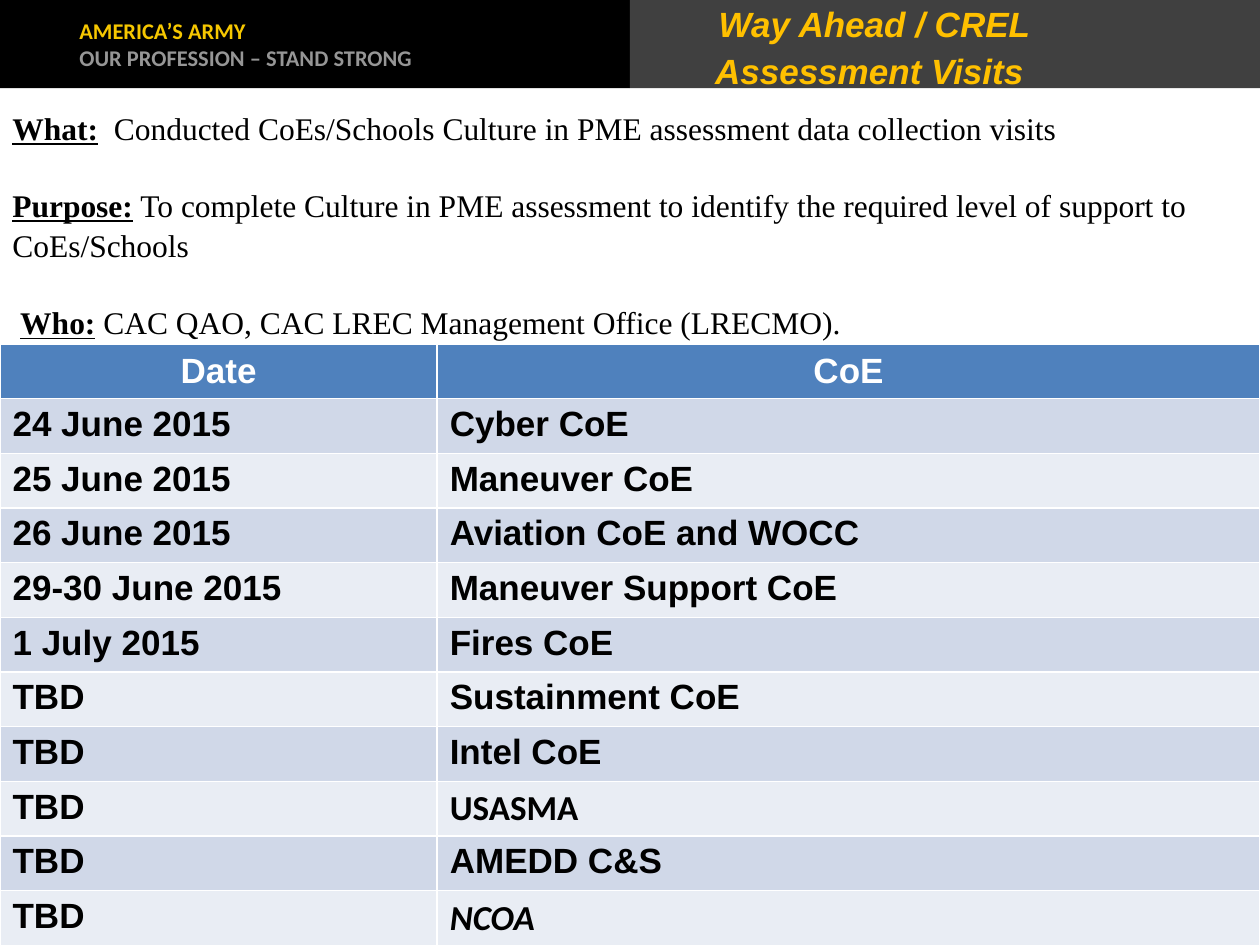
from pptx import Presentation, util as u
from pptx.dml.color import RGBColor
from pptx.enum import shapes, text

BLACK = RGBColor(0x00, 0x00, 0x00)
WHITE = RGBColor(0xFF, 0xFF, 0xFF)
CHARCOAL = RGBColor(0x40, 0x40, 0x40)
GRAY = RGBColor(0x96, 0x96, 0x96)
GOLD = RGBColor(0xF6, 0xC7, 0x00)
AMBER = RGBColor(0xFF, 0xC0, 0x00)
BLUE = RGBColor(0x4F, 0x81, 0xBD)
BANDS = [RGBColor(0xE9, 0xED, 0xF4), RGBColor(0xD0, 0xD8, 0xE8)]

deck = Presentation()
deck.slide_width, deck.slide_height = u.Inches(10), u.Inches(7.5)
W, H = deck.slide_width, deck.slide_height
slide = deck.slides.add_slide(deck.slide_layouts[6])
BANNER_H = u.Inches(0.7)
TABLE_TOP = u.Inches(2.73)


def set_font(paragraph, name, size, color, bold=True, italic=None):
    font = paragraph.font
    font.name, font.size, font.bold, font.italic = name, u.Pt(size), bold, italic
    font.color.rgb = color


# Banner: two halves of the slide's width
halves = []
for column, color in enumerate([BLACK, CHARCOAL]):
    half = slide.shapes.add_shape(
        shapes.MSO_SHAPE.RECTANGLE, column * W // 2, 0, W // 2, BANNER_H)
    half.shadow.inherit = False
    half.fill.solid()
    half.fill.fore_color.rgb = color
    half.line.fill.background()
    halves.append(half)

motto = halves[0].text_frame
motto.margin_left = u.Inches(0.63)
motto.vertical_anchor = text.MSO_ANCHOR.MIDDLE
motto.text = "AMERICA’S ARMY\nOUR PROFESSION – STAND STRONG"
for line, color in zip(motto.paragraphs, [GOLD, GRAY]):
    line.alignment = text.PP_ALIGN.LEFT
    set_font(line, "Calibri", 12.8, color)

title = slide.shapes.add_textbox(u.Inches(4.9), 0, u.Inches(4), BANNER_H).text_frame
title.word_wrap = True
title.vertical_anchor = text.MSO_ANCHOR.MIDDLE
title.margin_top = title.margin_bottom = 0
heading = title.paragraphs[0]
heading.text = " Way Ahead / CREL Assessment Visits"
heading.alignment = text.PP_ALIGN.CENTER
heading.line_spacing = 1.12
set_font(heading, "Arial", 20, AMBER, italic=True)

# Summary: underlined label, then its statement
summary = [
    ("", "What:", "  Conducted CoEs/Schools Culture in PME assessment data collection visits"),
    ("", "Purpose:", " To complete Culture in PME assessment to identify the required "
     "level of support to CoEs/Schools"),
    (" ", "Who:", " CAC QAO, CAC LREC Management Office (LRECMO)."),
]
summary_top = u.Inches(0.8)
notes = slide.shapes.add_textbox(0, summary_top, W, TABLE_TOP - summary_top).text_frame
notes.word_wrap = True
for i, (lead, label, statement) in enumerate(summary):
    point = notes.paragraphs[0] if i == 0 else notes.add_paragraph()
    point.line_spacing = 1.05
    if i:
        point.space_before = u.Pt(21.6)
    set_font(point, "Times New Roman", 18, BLACK, bold=False)
    for part in filter(None, (lead, label, statement)):
        run = point.add_run()
        run.text = part
        if part == label:
            run.font.bold = run.font.underline = True

# Visit schedule fills the rest of the slide
visits = [
    ("Date", "CoE"),
    ("24 June 2015", "Cyber CoE"),
    ("25 June 2015", "Maneuver CoE"),
    ("26 June 2015", "Aviation CoE and WOCC"),
    ("29-30 June 2015", "Maneuver Support CoE"),
    ("1 July 2015", "Fires CoE"),
    ("TBD", "Sustainment CoE"),
    ("TBD", "Intel CoE"),
    ("TBD", "USASMA"),
    ("TBD", "AMEDD C&S"),
    ("TBD", "NCOA"),
]
schedule = slide.shapes.add_table(
    len(visits), 2, 0, TABLE_TOP, W, H - TABLE_TOP).table
schedule.columns[0].width = u.Inches(3.47)
schedule.columns[1].width = W - u.Inches(3.47)
for r, visit in enumerate(visits):
    for c, entry in enumerate(visit):
        cell = schedule.cell(r, c)
        cell.text = entry
        cell.fill.solid()
        cell.fill.fore_color.rgb = BANDS[r % 2] if r else BLUE
        line = cell.text_frame.paragraphs[0]
        face = "Calibri" if entry in ("USASMA", "NCOA") else "Arial"
        set_font(line, face, 20, BLACK if r else WHITE, italic=entry == "NCOA")
        if r == 0:
            line.alignment = text.PP_ALIGN.CENTER
            cell.vertical_anchor = text.MSO_ANCHOR.MIDDLE

deck.save("out.pptx")
